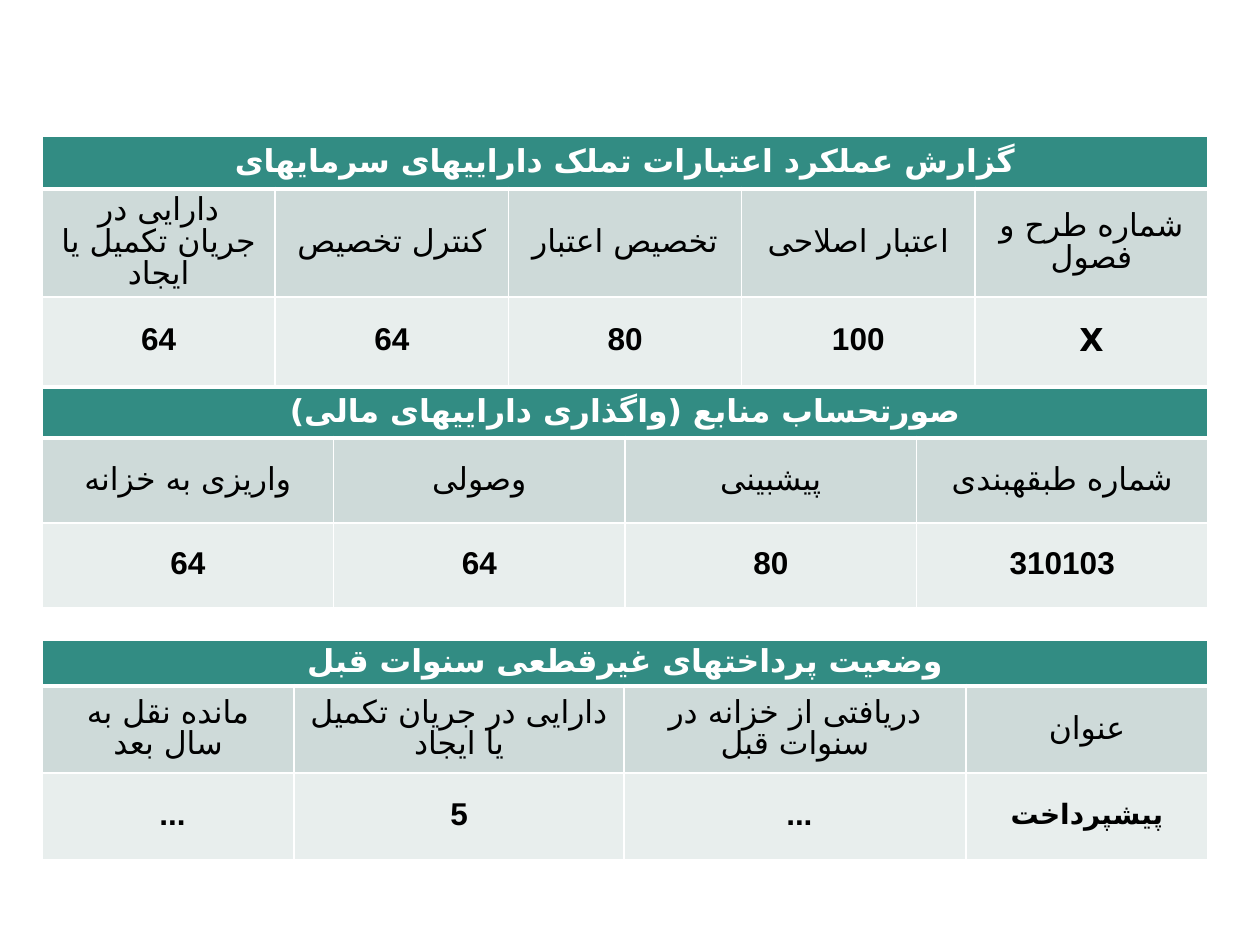
from lxml.etree import SubElement
from pptx import Presentation
from pptx.dml.color import RGBColor as Rgb
from pptx.enum.text import MSO_ANCHOR as Anchor, PP_ALIGN as Align
from pptx.oxml.ns import qn
from pptx.util import Emu, Pt

EMU_PER_PX = 914400 / 126
COLORS = {
    "title": "328C83",
    "heading": "CEDAD9",
    "value": "E8EEED",
    "white": "FFFFFF",
    "black": "000000",
}
TABLE_LEFT = 42
TABLE_WIDTH = 1166
TABLES = [
    {
        "top": 136,
        "columns": [TABLE_WIDTH / 5] * 5,
        "rows": [53, 89, 89],
        "title": "گزارش عملکرد اعتبارات تملک داراییهای سرمایهای",
        "headings": ["دارایی در جریان تکمیل یا ایجاد", "کنترل تخصیص", "تخصیص اعتبار",
                     "اعتبار اصلاحی", "شماره طرح و فصول"],
        "values": ["64", "64", "80", "100", "X"],
    },
    {
        "top": 388,
        "columns": [TABLE_WIDTH / 4] * 4,
        "rows": [50, 85, 85],
        "title": "صورتحساب منابع (واگذاری داراییهای مالی)",
        "headings": ["واریزی به خزانه", "وصولی", "پیشبینی", "شماره طبقهبندی"],
        "values": ["64", "64", "80", "310103"],
    },
    {
        "top": 640,
        "columns": [252, 330, 342, 242],
        "rows": [46, 87, 87],
        "title": "وضعیت پرداختهای غیرقطعی سنوات قبل",
        "headings": ["مانده نقل به سال بعد", "دارایی در جریان تکمیل یا ایجاد",
                     "دریافتی از خزانه در سنوات قبل", "عنوان"],
        "values": ["... ", "5", "... ", "پیشپرداخت"],
        "last_size": 16,
    },
]


def px(length):
    return Emu(round(length * EMU_PER_PX))


class ReportSlide:
    def __init__(self, slide):
        self.slide = slide

    def borders(self, cell, top=1, bottom=1):
        properties = cell._tc.get_or_add_tcPr()
        for side, width in (("L", 1), ("R", 1), ("T", top), ("B", bottom)):
            line = SubElement(properties, qn(f"a:ln{side}"), w=str(Pt(width)))
            fill = SubElement(line, qn("a:solidFill"))
            SubElement(fill, qn("a:srgbClr"), val=COLORS["white"])

    def cell(self, cell, text, role, size=18):
        cell.fill.solid()
        cell.fill.fore_color.rgb = Rgb.from_string(COLORS[role])
        cell.vertical_anchor = Anchor.MIDDLE
        paragraph = cell.text_frame.paragraphs[0]
        paragraph.text = text
        paragraph.alignment = Align.CENTER
        paragraph.line_spacing = 0.87
        paragraph._p.get_or_add_pPr().set("rtl", "1")
        font = paragraph.font
        font.size = Pt(size)
        font.bold = role != "heading"
        font.name = "DejaVu Sans" if role == "value" else "Arial"
        color = "white" if role == "title" else "black"
        font.color.rgb = Rgb.from_string(COLORS[color])
        script_font = "Arial" if text.strip(". ").isdecimal() else "DejaVu Sans"
        if text.startswith("..."):
            script_font = "Arial"
        SubElement(font._rPr, qn("a:cs"), typeface=script_font)

    def table(self, top, columns, rows, title, headings, values, last_size=18):
        frame = self.slide.shapes.add_table(
            len(rows), len(columns), px(TABLE_LEFT), px(top),
            px(TABLE_WIDTH), px(sum(rows)))
        table = frame.table
        for column, width in zip(table.columns, columns):
            column.width = px(width)
        for row, height in zip(table.rows, rows):
            row.height = px(height)
        for index in range(len(columns)):
            self.borders(table.cell(0, index), bottom=3)
            self.borders(table.cell(1, index), top=3)
            self.borders(table.cell(2, index))
        table.cell(0, 0).merge(table.cell(0, len(columns) - 1))
        self.cell(table.cell(0, 0), title, "title")
        for index, (heading, value) in enumerate(zip(headings, values)):
            size = last_size if index == len(columns) - 1 else 18
            self.cell(table.cell(1, index), heading, "heading")
            self.cell(table.cell(2, index), value, "value", size)


def main():
    presentation = Presentation()
    presentation.slide_width = px(1260)
    presentation.slide_height = px(945)
    report = ReportSlide(presentation.slides.add_slide(presentation.slide_layouts[6]))
    for table in TABLES:
        report.table(**table)
    presentation.save("out.pptx")


if __name__ == "__main__":
    main()
